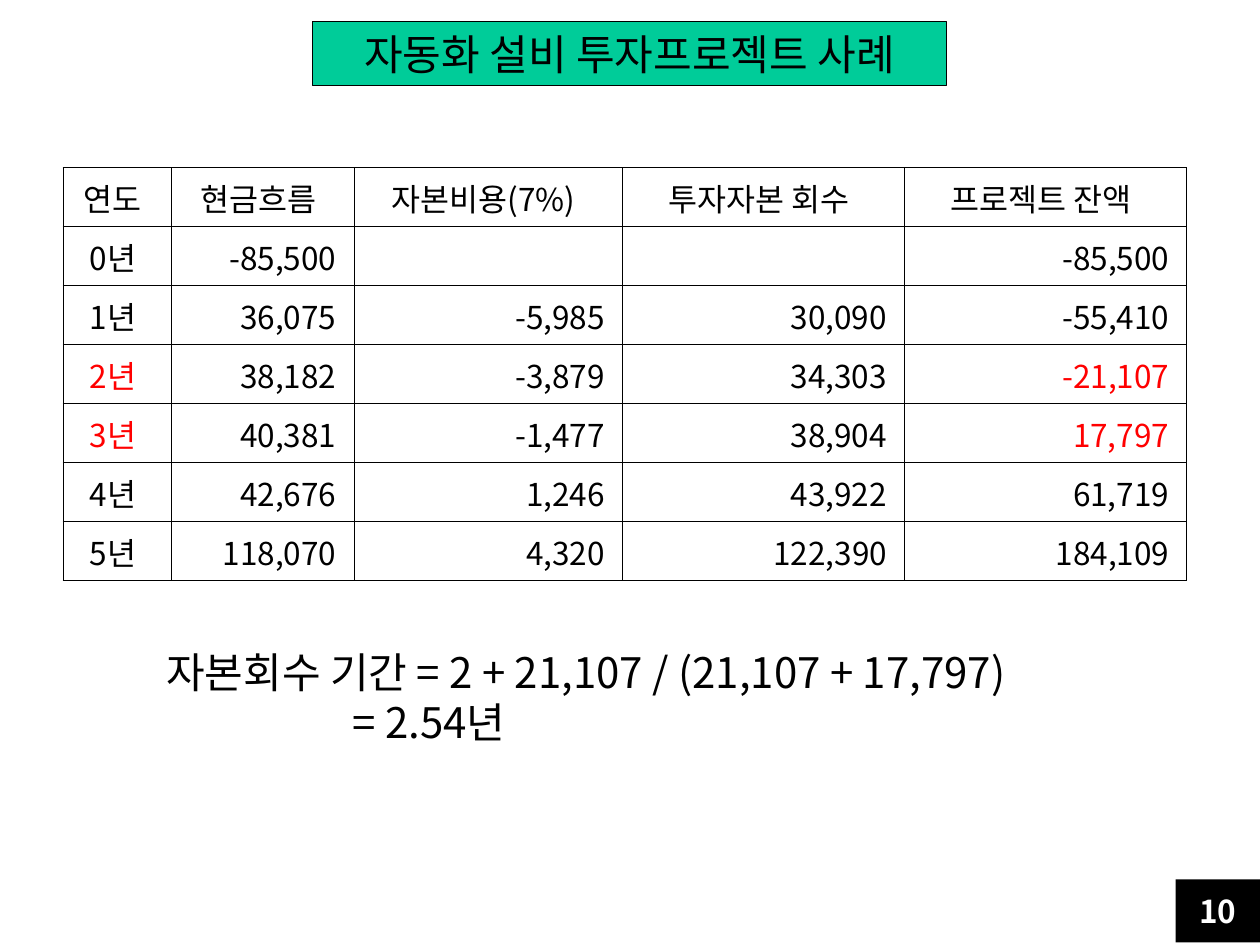
from dataclasses import dataclass

from lxml.etree import SubElement
from pptx import Presentation
from pptx.dml.color import RGBColor
from pptx.enum.shapes import MSO_SHAPE as Shape
from pptx.enum.text import MSO_ANCHOR as Anchor, MSO_AUTO_SIZE as AutoSize, PP_ALIGN as Align
from pptx.oxml.ns import qn
from pptx.util import Inches, Pt

FONT = "Noto Sans CJK KR"
COLORS = {"text": "000000", "accent": "FF0000", "banner": "00CC99", "badge": "000000", "light": "FFFFFF"}
COL_WIDTHS = [0.86, 1.45, 2.13, 2.24, 2.24]
ROW_HEIGHT = 3.28 / 7
HEADER = ["연도", "현금흐름", "자본비용(7%)", "투자자본 회수", "프로젝트 잔액"]


@dataclass(frozen=True)
class Year:
    label: str
    cash: str
    cost: str
    recovery: str
    balance: str
    turning: bool = False


@dataclass(frozen=True)
class Box:
    left: float
    top: float
    width: float
    height: float

    def emu(self) -> list:
        return [Inches(v) for v in (self.left, self.top, self.width, self.height)]


YEARS = [
    Year("0년", "-85,500", "", "", "-85,500"),
    Year("1년", "36,075", "-5,985", "30,090", "-55,410"),
    Year("2년", "38,182", "-3,879", "34,303", "-21,107", turning=True),
    Year("3년", "40,381", "-1,477", "38,904", "17,797", turning=True),
    Year("4년", "42,676", "1,246", "43,922", "61,719"),
    Year("5년", "118,070", "4,320", "122,390", "184,109"),
]


def set_attrs(obj, **values) -> None:
    for name, value in values.items():
        setattr(obj, name, value)


def rgb(name: str) -> RGBColor:
    return RGBColor.from_string(COLORS[name])


def write(p, text: str, size: int, color: str = "text", align=Align.LEFT, bold: bool = False) -> None:
    p.alignment = align
    r = p.add_run()
    r.text = text
    set_attrs(r.font, size=Pt(size), bold=bold, name=FONT)
    r.font.color.rgb = rgb(color)
    SubElement(r.font._element, qn("a:ea"), typeface=FONT)


def add_borders(cell) -> None:
    tc_pr = cell._tc.get_or_add_tcPr()
    for side in ("lnL", "lnR", "lnT", "lnB"):
        ln = SubElement(tc_pr, qn(f"a:{side}"), w=str(Pt(0.5)))
        fill = SubElement(ln, qn("a:solidFill"))
        SubElement(fill, qn("a:srgbClr"), val=COLORS["text"])


def fill_cell(cell, text: str, color: str, align) -> None:
    right = 0.14 if align == Align.RIGHT else 0.08
    set_attrs(cell, vertical_anchor=Anchor.MIDDLE, margin_left=Inches(0.01), margin_top=Inches(0.01),
              margin_right=Inches(right), margin_bottom=0)
    add_borders(cell)
    cell.fill.background()
    if text:
        write(cell.text_frame.paragraphs[0], text, 18, color, align)


def add_title(s, text: str, box: Box) -> None:
    sp = s.shapes.title
    set_attrs(sp, **dict(zip(("left", "top", "width", "height"), box.emu())))
    sp.fill.solid()
    sp.fill.fore_color.rgb = rgb("banner")
    sp.line.color.rgb = rgb("text")
    sp.line.width = Pt(0.75)
    set_attrs(sp.text_frame, auto_size=AutoSize.NONE, word_wrap=False, vertical_anchor=Anchor.MIDDLE)
    write(sp.text_frame.paragraphs[0], text, 24, align=Align.CENTER)


def add_balance_table(s, left: float, top: float) -> None:
    rows = len(YEARS) + 1
    box = Box(left, top, sum(COL_WIDTHS), rows * ROW_HEIGHT)
    table = s.shapes.add_table(rows, len(COL_WIDTHS), *box.emu()).table
    set_attrs(table, first_row=False, horz_banding=False)
    for column, width in zip(table.columns, COL_WIDTHS):
        column.width = Inches(width)
    for row in table.rows:
        row.height = Inches(ROW_HEIGHT)
    for c, text in enumerate(HEADER):
        fill_cell(table.cell(0, c), text, "text", Align.CENTER)
    for r, year in enumerate(YEARS, start=1):
        mark = "accent" if year.turning else "text"
        fill_cell(table.cell(r, 0), year.label, mark, Align.CENTER)
        for c, text in enumerate((year.cash, year.cost, year.recovery), start=1):
            fill_cell(table.cell(r, c), text, "text", Align.RIGHT)
        fill_cell(table.cell(r, 4), year.balance, mark, Align.RIGHT)


def add_formula(s, box: Box, first: str, second: str, indent: float) -> None:
    """Two lines, the second indented towards the equals sign."""
    tf = s.shapes.add_textbox(*box.emu()).text_frame
    tf.word_wrap = False
    write(tf.paragraphs[0], first, 24)
    p = tf.add_paragraph()
    write(p, second, 24)
    p._p.get_or_add_pPr().set("marL", str(Inches(indent)))


def add_page_badge(s, number: str, box: Box) -> None:
    sp = s.shapes.add_shape(Shape.RECTANGLE, *box.emu())
    sp.shadow.inherit = False
    sp.fill.solid()
    sp.fill.fore_color.rgb = rgb("badge")
    sp.line.fill.background()
    sp.text_frame.vertical_anchor = Anchor.MIDDLE
    write(sp.text_frame.paragraphs[0], number, 18, "light", Align.CENTER, bold=True)


def main() -> None:
    prs = Presentation()
    set_attrs(prs, slide_width=Inches(10), slide_height=Inches(7.5))
    s = prs.slides.add_slide(prs.slide_layouts.get_by_name("Title Only"))
    add_title(s, "자동화 설비 투자프로젝트 사례", Box(2.48, 0.17, 5.03, 0.51))
    add_balance_table(s, 0.5, 1.33)
    add_formula(s, Box(1.22, 5.08, 7.49, 0.91),
                "자본회수 기간 = 2 + 21,107 / (21,107 + 17,797)", "= 2.54년", indent=1.48)
    add_page_badge(s, "10", Box(9.33, 6.98, 0.67, 0.5))
    prs.save("out.pptx")


if __name__ == "__main__":
    main()
